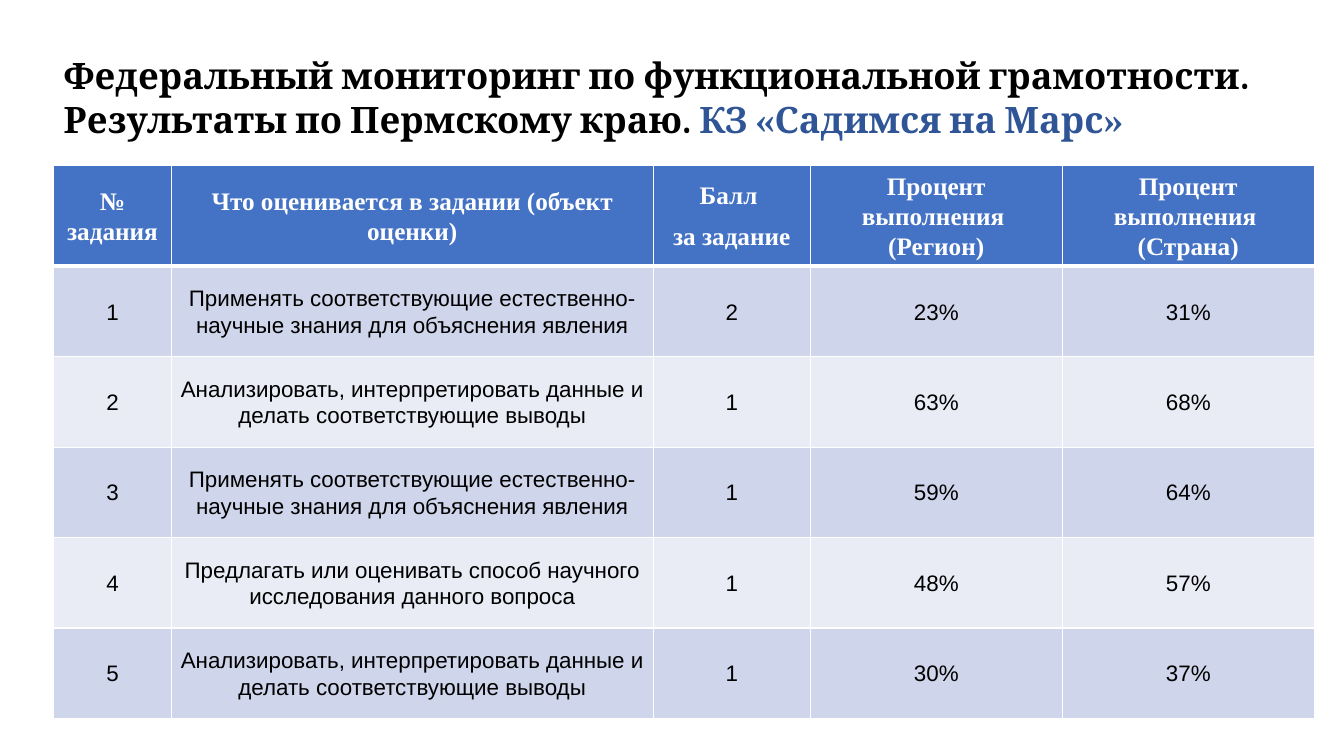
from lxml import etree
from pptx import Presentation
from pptx import util as u
from pptx.dml.color import RGBColor
from pptx.enum import text
from pptx.oxml import ns

BLACK = RGBColor(0x00, 0x00, 0x00)
WHITE = RGBColor(0xFF, 0xFF, 0xFF)
NAVY = RGBColor(0x2F, 0x55, 0x97)
BLUE = RGBColor(0x44, 0x72, 0xC4)
BANDS = [RGBColor(0xE9, 0xEB, 0xF5), RGBColor(0xCF, 0xD5, 0xEA)]

KNOWLEDGE = "Применять соответствующие естественно-научные знания для объяснения явления"
ANALYSIS = "Анализировать, интерпретировать данные и делать соответствующие выводы"
RESEARCH = "Предлагать или оценивать способ научного исследования данного вопроса"
ROWS = [
    ("№ задания", "Что оценивается в задании (объект оценки)", "Балл \nза задание",
     "Процент выполнения \v(Регион)", "Процент выполнения \v(Страна)"),
    ("1", KNOWLEDGE, "2", "23%", "31%"),
    ("2", ANALYSIS, "1", "63%", "68%"),
    ("3", KNOWLEDGE, "1", "59%", "64%"),
    ("4", RESEARCH, "1", "48%", "57%"),
    ("5", ANALYSIS, "1", "30%", "37%"),
]
WIDTHS = [2.97, 12.14, 3.96, 6.35, 6.35]
HEIGHTS = [2.54] + [2.28] * 5


def add_border(cell, side, points):
    tcPr = cell._tc.get_or_add_tcPr()
    ln = etree.SubElement(tcPr, ns.qn(f"a:ln{side}"), w=str(u.Pt(points)))
    fill = etree.SubElement(ln, ns.qn("a:solidFill"))
    etree.SubElement(fill, ns.qn("a:srgbClr"), val=str(WHITE))


prs = Presentation()
prs.slide_width, prs.slide_height = u.Cm(33.87), u.Cm(19.05)
s = prs.slides.add_slide(prs.slide_layouts[5])

title = s.shapes.title
title.left, title.top = u.Cm(1.35), u.Cm(1.22)
title.width, title.height = u.Cm(31.77), u.Cm(2.49)
tf = title.text_frame
tf.word_wrap = True
tf.auto_size = text.MSO_AUTO_SIZE.SHAPE_TO_FIT_TEXT
tf.vertical_anchor = text.MSO_ANCHOR.TOP
p = tf.paragraphs[0]
p.alignment = text.PP_ALIGN.LEFT
p.font.name, p.font.size, p.font.bold = "Cambria", u.Pt(26), True
for words, color in [
    ("Федеральный мониторинг по функциональной грамотности. Результаты по Пермскому краю. ", BLACK),
    ("КЗ «Садимся на Марс»", NAVY),
]:
    r = p.add_run()
    r.text = words
    r.font.color.rgb = color

table = s.shapes.add_table(len(ROWS), len(WIDTHS), u.Cm(1.35), u.Cm(4.17),
                           u.Cm(sum(WIDTHS)), u.Cm(sum(HEIGHTS))).table
for column, width in zip(table.columns, WIDTHS):
    column.width = u.Cm(width)

for i, (row, height, values) in enumerate(zip(table.rows, HEIGHTS, ROWS)):
    row.height = u.Cm(height)
    header = i == 0
    for cell, value in zip(row.cells, values):
        for side in "LR":
            add_border(cell, side, 1)
        add_border(cell, "T", 3 if i == 1 else 1)
        add_border(cell, "B", 3 if header else 1)
        cell.fill.solid()
        cell.fill.fore_color.rgb = BLUE if header else BANDS[i % 2]
        cell.vertical_anchor = text.MSO_ANCHOR.MIDDLE
        cell.margin_left = cell.margin_right = u.Cm(0.18)
        cell.margin_top = cell.margin_bottom = 0
        cell.text = value
        for p in cell.text_frame.paragraphs:
            p.alignment = text.PP_ALIGN.CENTER
            p.line_spacing = 1.07
            p.space_after = u.Pt(8)
            p.font.name = "Times New Roman" if header else "Arial"
            p.font.size = u.Pt(18 if header else 16)
            p.font.bold = header
            p.font.color.rgb = WHITE if header else BLACK

prs.save("out.pptx")
